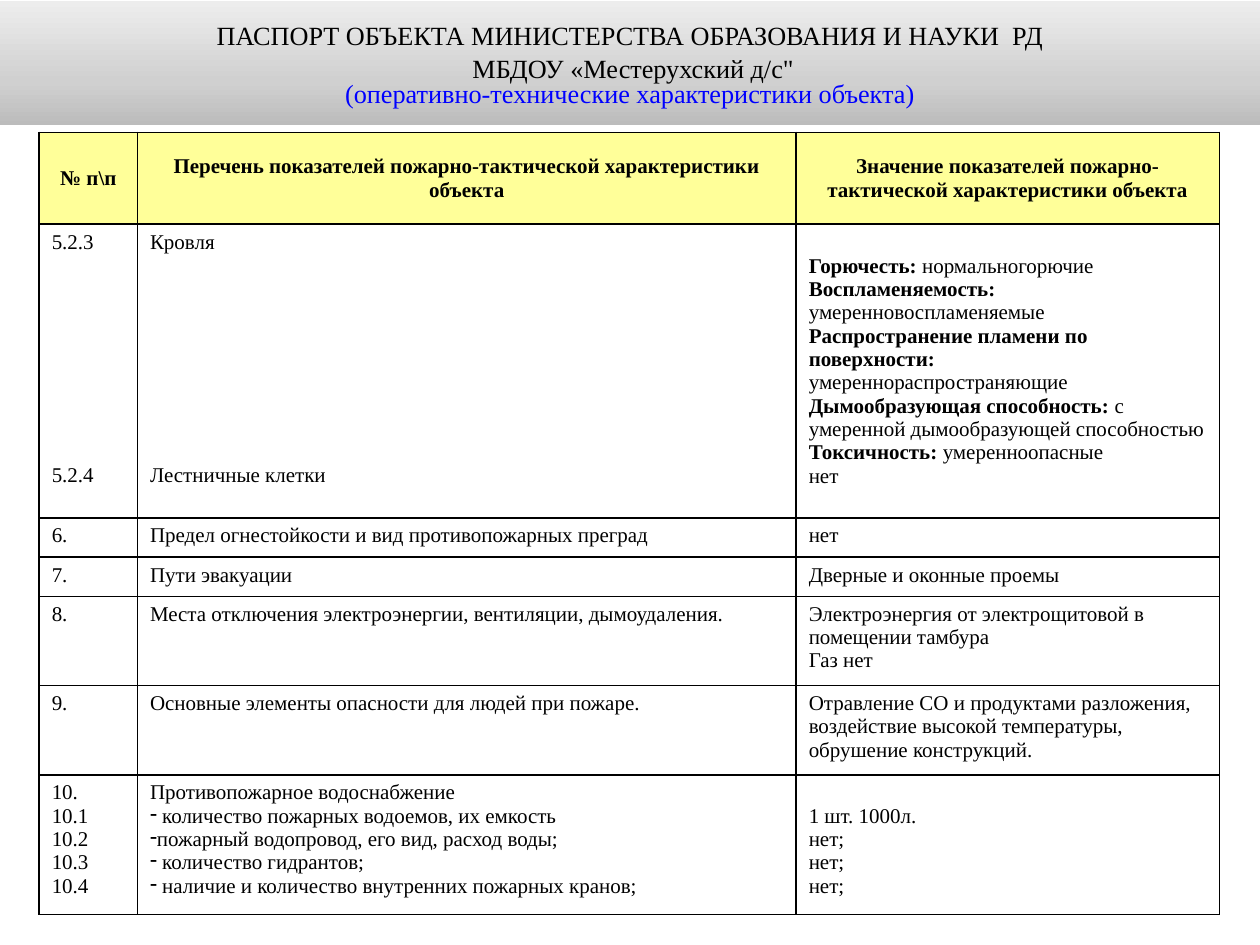
import dataclasses
import lxml.etree
import pptx
import pptx.dml.color
import pptx.enum.text
import pptx.oxml.ns
import pptx.util

Cm = pptx.util.Cm
Pt = pptx.util.Pt
qn = pptx.oxml.ns.qn
Align = pptx.enum.text.PP_ALIGN
Anchor = pptx.enum.text.MSO_ANCHOR


@dataclasses.dataclass(frozen=True)
class Theme:
    font: str = "Times New Roman"
    ink: str = "000000"
    blue: str = "0000FF"
    head: str = "FFFF99"
    paper: str = "FFFFFF"
    fade: tuple = ((0, "BCBCBC"), (35, "D0D0D0"), (100, "EDEDED"))
    title: float = 15
    body: float = 12
    rule: float = 1


T = Theme()

HEAD = (
    "№ п\\п",
    "Перечень показателей пожарно-тактической характеристики объекта",
    "Значение показателей пожарно-тактической характеристики объекта",
)
ROWS = (
    ("5.2.3\n5.2.4", "Кровля\nЛестничные клетки",
     "*Горючесть: *нормальногорючие\n"
     "*Воспламеняемость: *умеренновоспламеняемые\n"
     "*Распространение пламени по поверхности:\n"
     "умереннораспространяющие\n"
     "*Дымообразующая способность: *с умеренной дымообразующей способностью\n"
     "*Токсичность: *умеренноопасные\n"
     "нет"),
    ("6.", "Предел огнестойкости и вид противопожарных преград", "нет"),
    ("7.", "Пути эвакуации", "Дверные и оконные проемы"),
    ("8.", "Места отключения электроэнергии, вентиляции, дымоудаления.",
     "Электроэнергия от электрощитовой в помещении тамбура\nГаз нет"),
    ("9.", "Основные элементы опасности для людей при пожаре.",
     "Отравление СО и продуктами разложения, воздействие высокой температуры, "
     "обрушение конструкций."),
    ("10.\n10.1\n10.2\n10.3\n10.4",
     "Противопожарное водоснабжение\n"
     "- количество пожарных водоемов, их емкость\n"
     "-пожарный водопровод, его вид, расход воды;\n"
     "- количество гидрантов;\n"
     "- наличие и количество внутренних пожарных кранов;",
     "1 шт. 1000л.\nнет;\nнет;\nнет;"),
)
WIDTHS = (1.98, 13.28, 8.53)
HEIGHTS = (1.85, 5.92, 0.79, 0.79, 1.8, 1.8, 2.82)
GAP = 120
LINE = 0.47


def write(para, text, size=T.body, color=T.ink, bold=False, align=Align.LEFT):
    para.alignment = align
    run = para.add_run()
    run.text = text
    font = run.font
    font.name, font.size, font.bold = T.font, Pt(size), bold
    font.color.rgb = pptx.dml.color.RGBColor.from_string(color)


def node(base, tag, **attrs):
    return lxml.etree.SubElement(base, qn(tag), attrs)


def dash(para):
    props = para._p.get_or_add_pPr()
    props.set("marL", "0")
    props.set("indent", "0")
    node(props, "a:buChar", char="-")


def frame(cell):
    props = cell._tc.get_or_add_tcPr()
    for side in "LRTB":
        line = node(props, f"a:ln{side}", w=str(Pt(T.rule)))
        node(node(line, "a:solidFill"), "a:srgbClr", val=T.ink)


def fill(cell, text, color, gap=0, **fmt):
    frame(cell)
    cell.fill.solid()
    cell.fill.fore_color.rgb = pptx.dml.color.RGBColor.from_string(color)
    body = cell.text_frame
    for i, line in enumerate(text.split("\n")):
        para = body.add_paragraph() if i else body.paragraphs[0]
        if i and gap:
            para.space_before = Pt(gap)
        if line.startswith("-"):
            dash(para)
            line = line[1:]
        for k, part in enumerate(line.split("*")):
            if part:
                write(para, part, **{"bold": k == 1, **fmt})


def banner(slide, left, top, width, height):
    bar = slide.shapes.title
    bar.left, bar.top, bar.width, bar.height = left, top, width, height
    bar.fill.gradient()
    bar.fill.gradient_angle = 90
    stops = bar._element.spPr.find(".//" + qn("a:gsLst"))
    stops.clear()
    for pos, color in T.fade:
        node(node(stops, "a:gs", pos=str(pos * 1000)), "a:srgbClr", val=color)
    body = bar.text_frame
    body.word_wrap = True
    body.auto_size = pptx.enum.text.MSO_AUTO_SIZE.NONE
    body.vertical_anchor = Anchor.MIDDLE
    name = body.paragraphs[0]
    fmt = {"size": T.title, "align": Align.CENTER}
    name.line_spacing = 1.05
    write(name, "ПАСПОРТ ОБЪЕКТА МИНИСТЕРСТВА ОБРАЗОВАНИЯ И НАУКИ  РД", **fmt)
    name.add_line_break()
    write(name, " МБДОУ «Местерухский д/с\"", **fmt)
    note = body.add_paragraph()
    note.line_spacing = 0.8
    note.space_before = Pt(0)
    write(note, "(оперативно-технические характеристики объекта)",
          color=T.blue, **fmt)


def grid(slide, left, top, width, height):
    table = slide.shapes.add_table(
        len(HEIGHTS), len(WIDTHS), left, top, width, height).table
    table.horz_banding = False
    for col, size in zip(table.columns, WIDTHS):
        col.width = Cm(size)
    for row, size in zip(table.rows, HEIGHTS):
        row.height = Cm(size)
    for c, text in enumerate(HEAD):
        cell = table.cell(0, c)
        cell.vertical_anchor = Anchor.MIDDLE
        fill(cell, text, T.head, bold=True, align=Align.CENTER)
    for r, row in enumerate(ROWS, 1):
        for c, text in enumerate(row):
            fill(table.cell(r, c), text, T.paper, GAP if r == 1 and c < 2 else 0)
    table.cell(1, 2).vertical_anchor = Anchor.MIDDLE
    last = table.cell(len(ROWS), 2)
    last.margin_top += Cm(LINE)


def main():
    deck = pptx.Presentation()
    deck.slide_width, deck.slide_height = Cm(25.4), Cm(19.05)
    slide = deck.slides.add_slide(deck.slide_layouts[5])
    banner(slide, 0, Cm(0.03), deck.slide_width, Cm(2.49))
    grid(slide, Cm(0.79), Cm(2.67), Cm(sum(WIDTHS)), Cm(sum(HEIGHTS)))
    deck.save("out.pptx")


if __name__ == "__main__":
    main()
